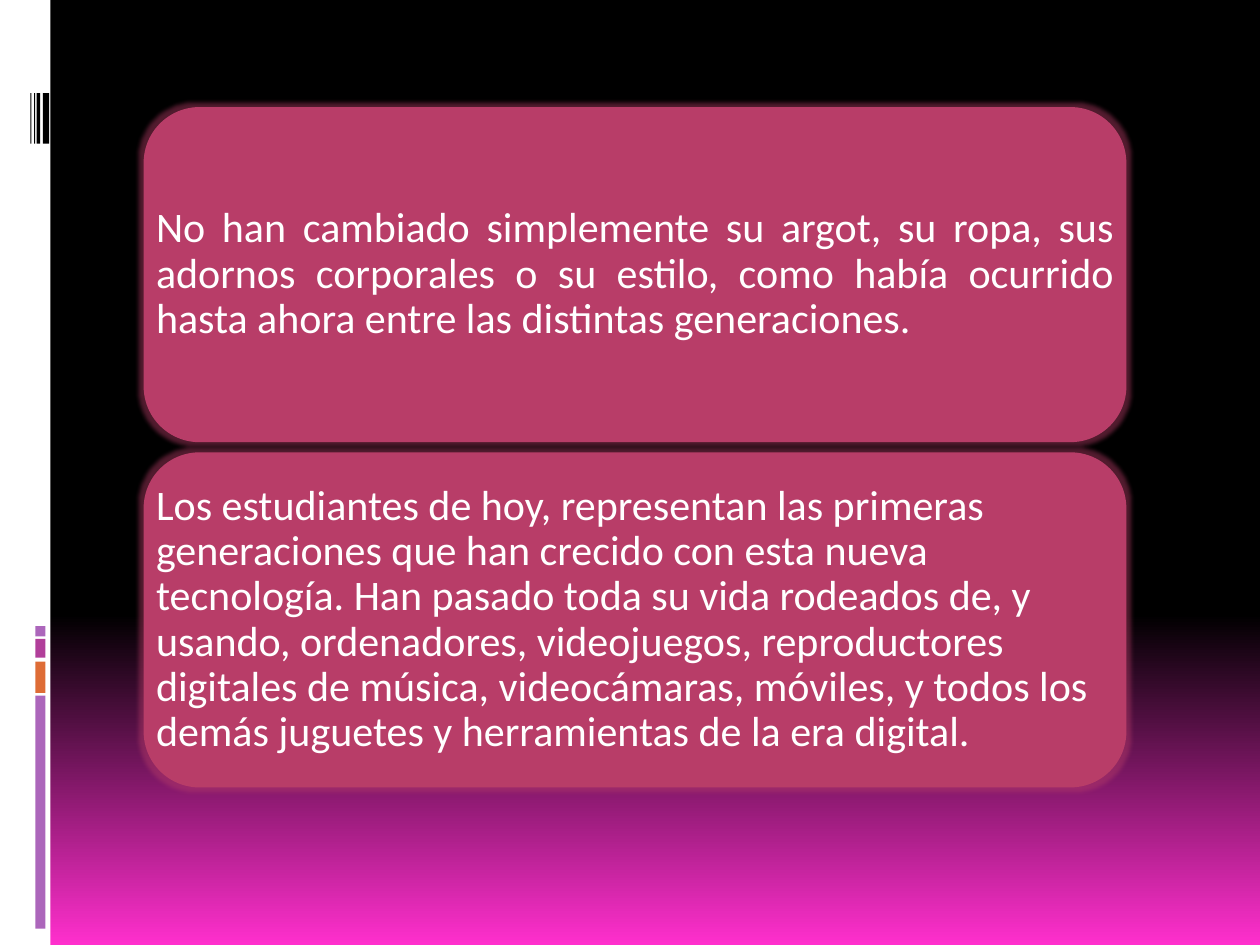
from lxml import etree
from pptx import Presentation
from pptx.dml.color import RGBColor
from pptx.enum import shapes, text
from pptx.oxml import ns
from pptx.util import Inches, Pt

WHITE = RGBColor(0xFF, 0xFF, 0xFF)
BLACK = RGBColor(0, 0, 0)
PINK = RGBColor(0xFF, 0x2F, 0xCD)
ROSE = RGBColor(0xB8, 0x3D, 0x68)
LILAC = RGBColor(0xAC, 0x66, 0xBB)
ORANGE = RGBColor(0xDE, 0x6C, 0x36)
PLUM = RGBColor(0xB1, 0x3F, 0x9A)

BLOCKS = [(5.52, 1.85, LILAC), (5.25, 0.25, ORANGE),
          (5.07, 0.15, PLUM), (4.97, 0.08, LILAC)]
STRIPES = [(0.34, 0.05), (0.29, 0.03), (0.27, 0.01), (0.24, 0.01)]
CARDS = [
    ("No han cambiado simplemente su argot, su ropa, sus adornos corporales "
     "o su estilo, como había ocurrido hasta ahora entre las distintas "
     "generaciones.", text.PP_ALIGN.JUSTIFY),
    ("Los estudiantes de hoy, representan las primeras generaciones que han "
     "crecido con esta nueva tecnología. Han pasado toda su vida rodeados "
     "de, y usando, ordenadores, videojuegos, reproductores digitales de "
     "música, videocámaras, móviles, y todos los demás juguetes y "
     "herramientas de la era digital.", text.PP_ALIGN.LEFT),
]


def set_back(slide):
    """Fade the background from black down to pink."""
    fill = slide.background.fill
    fill.gradient()
    fill.gradient_angle = 270
    for stop, place, color in zip(fill.gradient_stops, (0.65, 1), (BLACK, PINK)):
        stop.position = place
        stop.color.rgb = color


def add_box(slide, box, color, kind=shapes.MSO_SHAPE.RECTANGLE):
    """Add a plain filled shape without an outline."""
    shape = slide.shapes.add_shape(kind, *map(Inches, box))
    shape.shadow.inherit = False
    shape.fill.solid()
    shape.fill.fore_color.rgb = color
    shape.line.fill.background()
    return shape


def add_glow(shape, color, size):
    """Surround a shape with a soft half-clear glow."""
    effects = shape._element.spPr.find(ns.qn("a:effectLst"))
    glow = etree.SubElement(effects, ns.qn("a:glow"), rad=str(Pt(size)))
    tint = etree.SubElement(glow, ns.qn("a:srgbClr"), val=str(color))
    etree.SubElement(tint, ns.qn("a:alpha"), val="45000")


def add_text(slide, box, words, align):
    """Add a middle-anchored block of white body text."""
    frame = slide.shapes.add_textbox(*map(Inches, box)).text_frame
    frame.word_wrap = True
    frame.vertical_anchor = text.MSO_ANCHOR.MIDDLE
    frame.margin_left = frame.margin_right = Inches(0.1)
    frame.margin_top = frame.margin_bottom = Inches(0.1)
    para = frame.paragraphs[0]
    para.text = words
    para.alignment = align
    para.line_spacing = 0.9
    para.font.name = "Calibri"
    para.font.size = Pt(24)
    para.font.color.rgb = WHITE


def add_card(slide, box, words, align):
    """Add a glowing rounded card with its text."""
    card = add_box(slide, box, ROSE, shapes.MSO_SHAPE.ROUNDED_RECTANGLE)
    add_glow(card, ROSE, 5)
    add_text(slide, box, words, align)


def main():
    """Build and save the slide."""
    deck = Presentation()
    deck.slide_width, deck.slide_height = Inches(10), Inches(7.5)
    slide = deck.slides.add_slide(deck.slide_layouts[6])
    set_back(slide)
    add_box(slide, (0, 0, 0.4, 7.5), WHITE)
    for top, height, color in BLOCKS:
        add_box(slide, (0.28, top, 0.08, height), color)
    for left, width in STRIPES:
        add_box(slide, (left, 0.74, width, 0.4), BLACK)
    for row, (words, align) in enumerate(CARDS):
        add_card(slide, (1.14, 0.85 + row * 2.74, 7.8, 2.66), words, align)
    deck.save("out.pptx")


if __name__ == "__main__":
    main()
